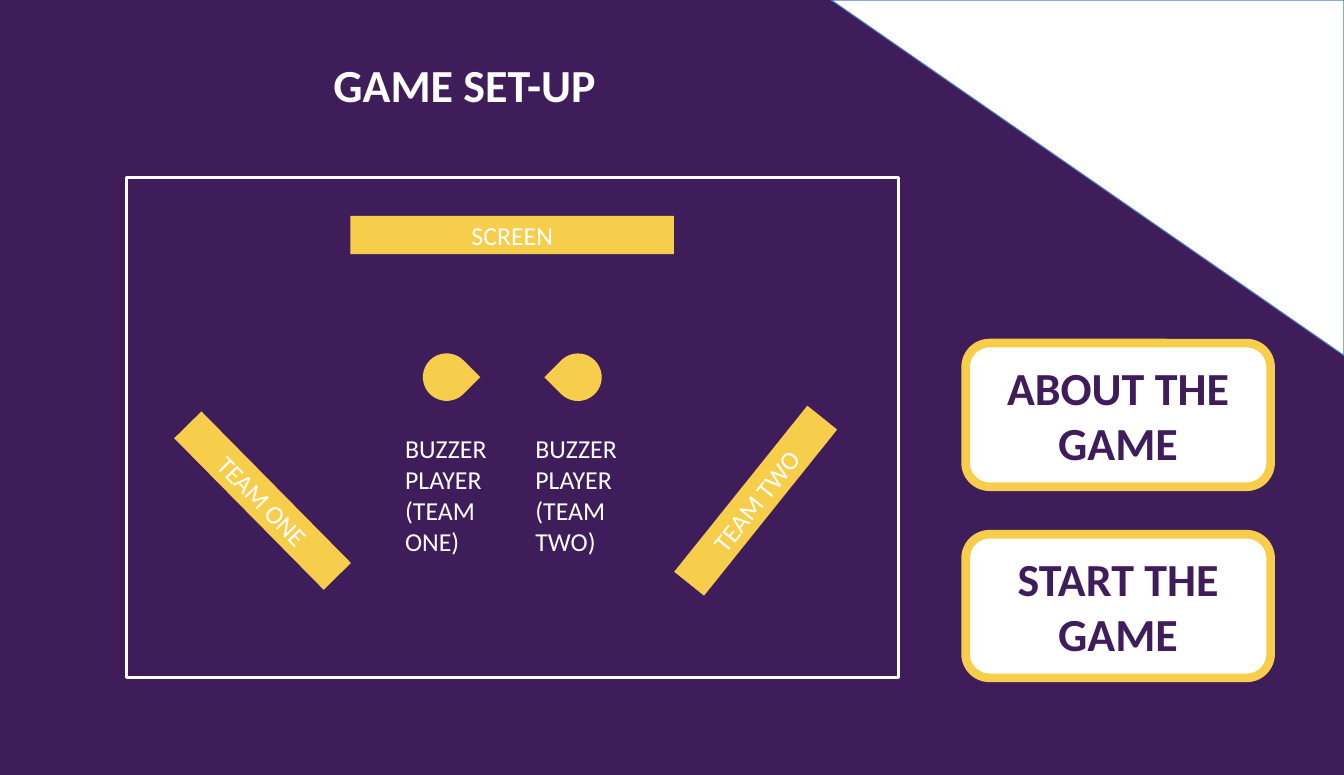
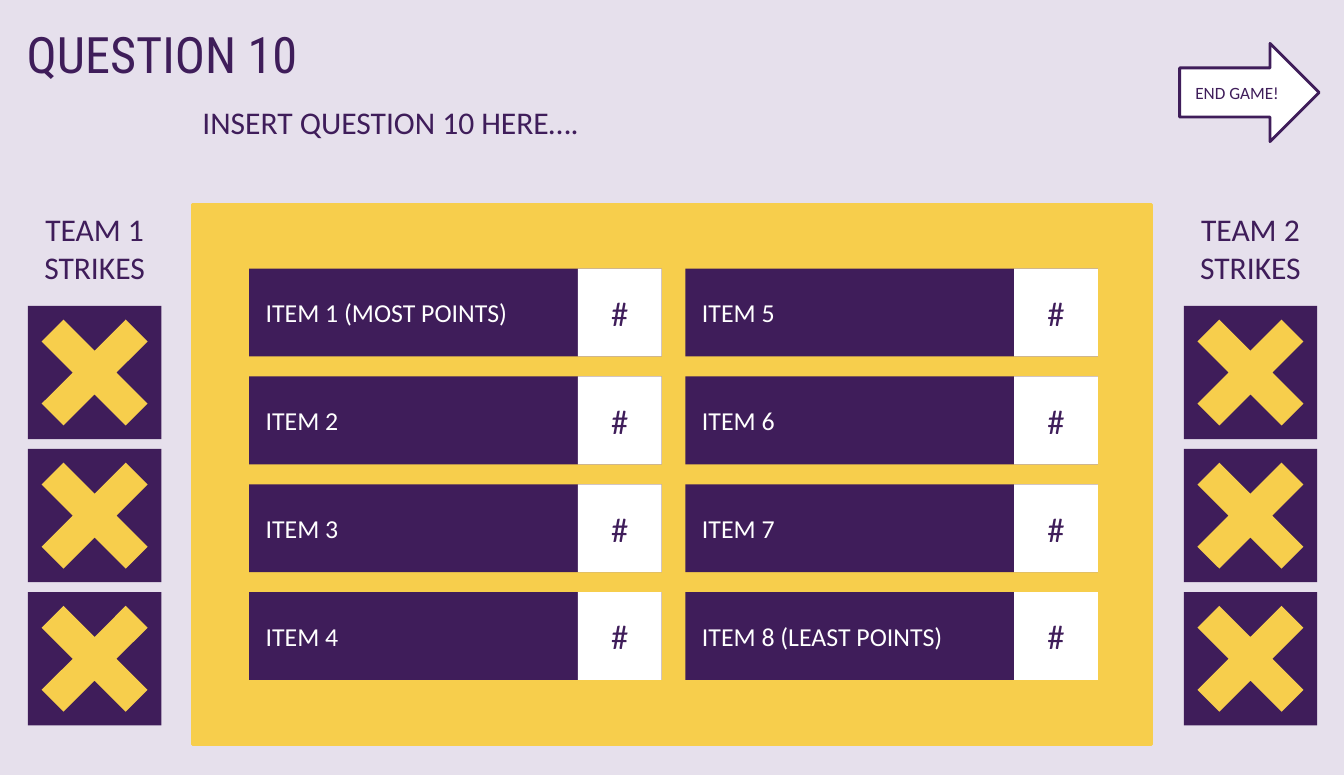
from dataclasses import dataclass

from pptx import Presentation
from pptx.dml.color import RGBColor
from pptx.enum.shapes import MSO_SHAPE as Shape
from pptx.enum.text import MSO_ANCHOR as Anchor, MSO_AUTO_SIZE as AutoSize, PP_ALIGN as Align
from pptx.util import Inches, Pt


@dataclass(frozen=True)
class Theme:
    purple: str = "3F1D5A"
    yellow: str = "F7CE4C"
    white: str = "FFFFFF"
    lilac: str = "E6E0EC"
    blue: str = "4B7EBC"
    body_font: str = "Calibri"
    title_font: str = "Roboto Condensed"
    title: float = 35
    heading: float = 32
    points: float = 24
    prompt: float = 22
    label: float = 18
    small: float = 12


@dataclass(frozen=True)
class Box:
    left: float
    top: float
    width: float
    height: float

    def within(self, left, top, width, height):
        return Box(self.left + left, self.top + top, width, height)

    def inset(self, gap):
        return self.within(gap, gap, self.width - 2 * gap, self.height - 2 * gap)

    def emu(self):
        return [Inches(side) for side in (self.left, self.top, self.width, self.height)]


THEME = Theme()


def colour(value):
    return RGBColor.from_string(value)


def apply(target, values):
    for name, value in values.items():
        setattr(target, name, value)


def write(holder, text, size, ink, align=Align.CENTER, bold=False, font=THEME.body_font, **frame):
    apply(holder.text_frame, {"word_wrap": True, **frame})
    paragraph = holder.text_frame.paragraphs[0]
    paragraph.alignment = align
    run = paragraph.add_run()
    run.text = text
    apply(run.font, {"name": font, "size": Pt(size), "bold": bold})
    run.font.color.rgb = colour(ink)


def add_panel(shapes, box, kind=Shape.RECTANGLE, fill=None, line=None, weight=2, rotation=0):
    panel = shapes.add_shape(kind, *box.emu())
    panel.shadow.inherit = False
    panel.rotation = rotation
    if fill:
        panel.fill.solid()
        panel.fill.fore_color.rgb = colour(fill)
    else:
        panel.fill.background()
    if line:
        panel.line.color.rgb = colour(line)
        panel.line.width = Pt(weight)
    else:
        panel.line.fill.background()
    return panel


def add_label(shapes, box, text, size, ink, **style):
    label = shapes.add_textbox(*box.emu())
    write(label, text, size, ink, auto_size=AutoSize.SHAPE_TO_FIT_TEXT, **style)


def add_slide(deck, background):
    slide = deck.slides.add_slide(deck.slide_layouts[6])
    slide.background.fill.solid()
    slide.background.fill.fore_color.rgb = colour(background)
    return slide.shapes


def add_bar(shapes, box, text, rotation=0):
    bar = add_panel(shapes, box, fill=THEME.yellow, rotation=rotation)
    write(bar, text, THEME.label, THEME.white, vertical_anchor=Anchor.MIDDLE)


def add_room(shapes, box):
    add_panel(shapes, box, line=THEME.white)
    add_bar(shapes, box.within(2.17, 0.37, 3.13, 0.37), "SCREEN")
    teams = (
        ("ONE", 0.29, 45.4, 2.87, 45, 2.6),
        ("TWO", 5.06, 308.7, 4.14, 225, 3.86),
    )
    for team, bench_left, bench_turn, buzzer_left, buzzer_turn, player_left in teams:
        add_bar(shapes, box.within(bench_left, 2.94, 2.06, 0.37), f"TEAM {team}", bench_turn)
        add_panel(shapes, box.within(buzzer_left, 1.7, 0.46, 0.46), Shape.TEAR,
                  fill=THEME.yellow, rotation=buzzer_turn)
        add_label(shapes, box.within(player_left, 2.42, 1.01, 1.31),
                  f"BUZZER PLAYER (TEAM {team})", THEME.label, THEME.white, align=Align.LEFT)


def add_menu(shapes, box):
    for index, caption in enumerate(("ABOUT THE GAME", "START THE GAME")):
        button = add_panel(shapes, box.within(0, index * 1.85, box.width, 1.39),
                           Shape.ROUNDED_RECTANGLE, THEME.white, THEME.yellow, 6)
        write(button, caption, THEME.heading, THEME.purple, bold=True,
              vertical_anchor=Anchor.MIDDLE)


def add_answer(shapes, box, text):
    answer = shapes.add_group_shape().shapes
    item = add_panel(answer, box, fill=THEME.purple)
    write(item, text, THEME.label, THEME.white, align=Align.LEFT,
          vertical_anchor=Anchor.MIDDLE, margin_left=Inches(0.16))
    points = add_panel(answer, box.within(box.width - 0.81, 0, 0.81, box.height), fill=THEME.white)
    write(points, "#", THEME.points, THEME.purple, vertical_anchor=Anchor.MIDDLE)


def add_board(shapes, box, notes, rows=4):
    add_panel(shapes, box, fill=THEME.yellow, line=THEME.yellow)
    pitch = 3.13 / (rows - 1)
    for index in range(2 * rows):
        column, row = divmod(index, rows)
        slot = box.within(0.55 + 4.22 * column, 0.62 + pitch * row, 3.99, 0.85)
        number = index + 1
        add_answer(shapes, slot, f"ITEM {number}{notes.get(number, '')}")


def add_strikes(shapes, box, team, strikes=3):
    add_label(shapes, box.within(0, 0, box.width, 0.84), f"TEAM {team} STRIKES",
              THEME.prompt, THEME.purple)
    first = 0.98
    pitch = (box.height - first - box.width) / (strikes - 1)
    for strike in range(strikes):
        tile = box.within(0, first + pitch * strike, box.width, box.width)
        add_panel(shapes, tile, fill=THEME.purple)
        cross = add_panel(shapes, tile.inset(0.07), Shape.CROSS, THEME.yellow, rotation=315)
        cross.adjustments[0] = 0.37


def build_setup(deck):
    shapes = add_slide(deck, THEME.purple)
    add_panel(shapes, Box(8.04, 0, 4.96, 3.44), Shape.RIGHT_TRIANGLE,
              THEME.white, THEME.blue, 0.75, 180)
    add_label(shapes, Box(2.25, 0.5, 4.49, 0.64), "GAME SET-UP",
              THEME.heading, THEME.white, bold=True)
    add_room(shapes, Box(1.22, 1.72, 7.47, 4.84))
    add_menu(shapes, Box(9.34, 3.32, 2.95, 3.24))


def build_question(deck, number, notes):
    shapes = add_slide(deck, THEME.lilac)
    add_label(shapes, Box(0.16, 0.18, 3.02, 0.69), f"QUESTION {number}",
              THEME.title, THEME.purple, align=Align.LEFT, font=THEME.title_font)
    add_label(shapes, Box(1.86, 0.95, 3.89, 0.47), f"INSERT QUESTION {number} HERE….",
              THEME.prompt, THEME.purple, align=Align.LEFT, word_wrap=False)
    add_board(shapes, Box(1.86, 1.98, 9.28, 5.23), notes)
    for team, left in ((1, 0.27), (2, 11.45)):
        add_strikes(shapes, Box(left, 1.98, 1.29, 5.04), team)
    end_game = add_panel(shapes, Box(11.41, 0.42, 1.35, 0.95), Shape.RIGHT_ARROW,
                         THEME.white, THEME.purple)
    write(end_game, "END GAME!", THEME.small, THEME.purple, vertical_anchor=Anchor.MIDDLE)


def main():
    deck = Presentation()
    apply(deck, {"slide_width": Inches(13), "slide_height": Inches(7.5)})
    build_setup(deck)
    build_question(deck, 10, {1: " (MOST POINTS)", 8: " (LEAST POINTS)"})
    deck.save("out.pptx")


if __name__ == "__main__":
    main()
